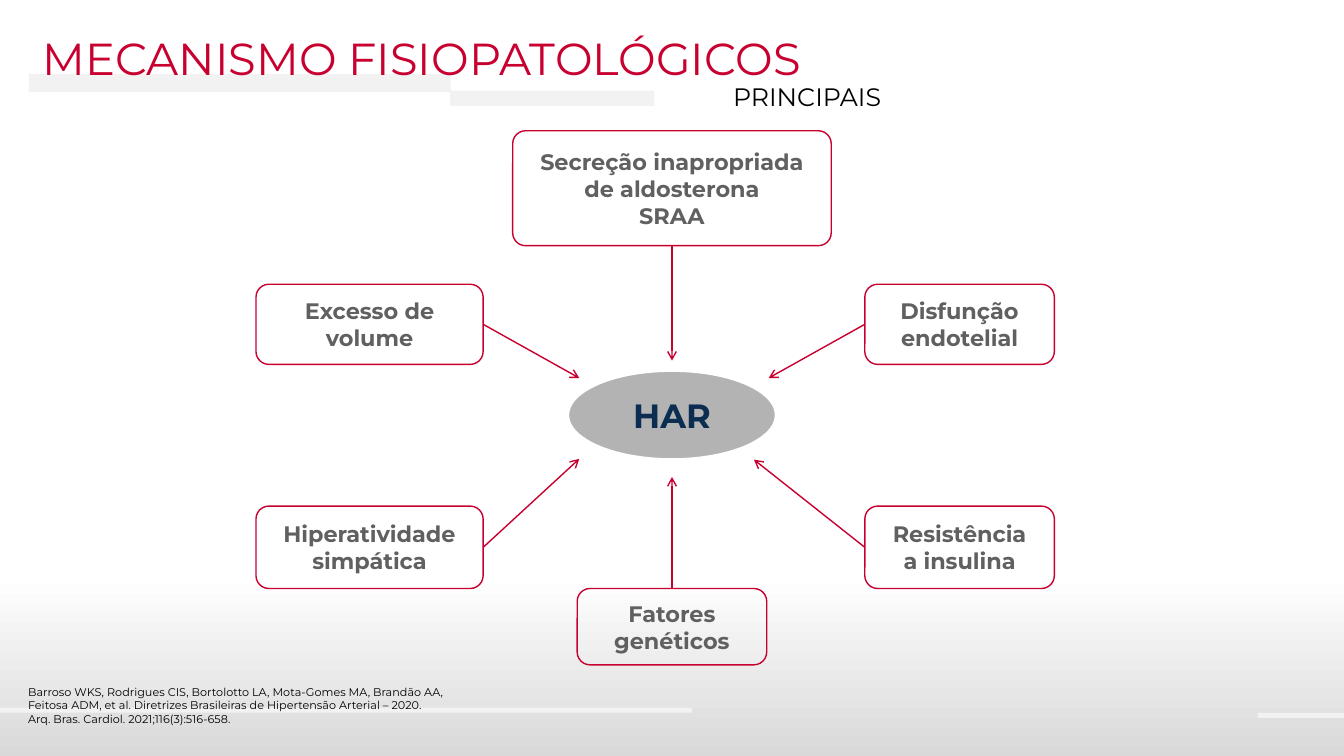
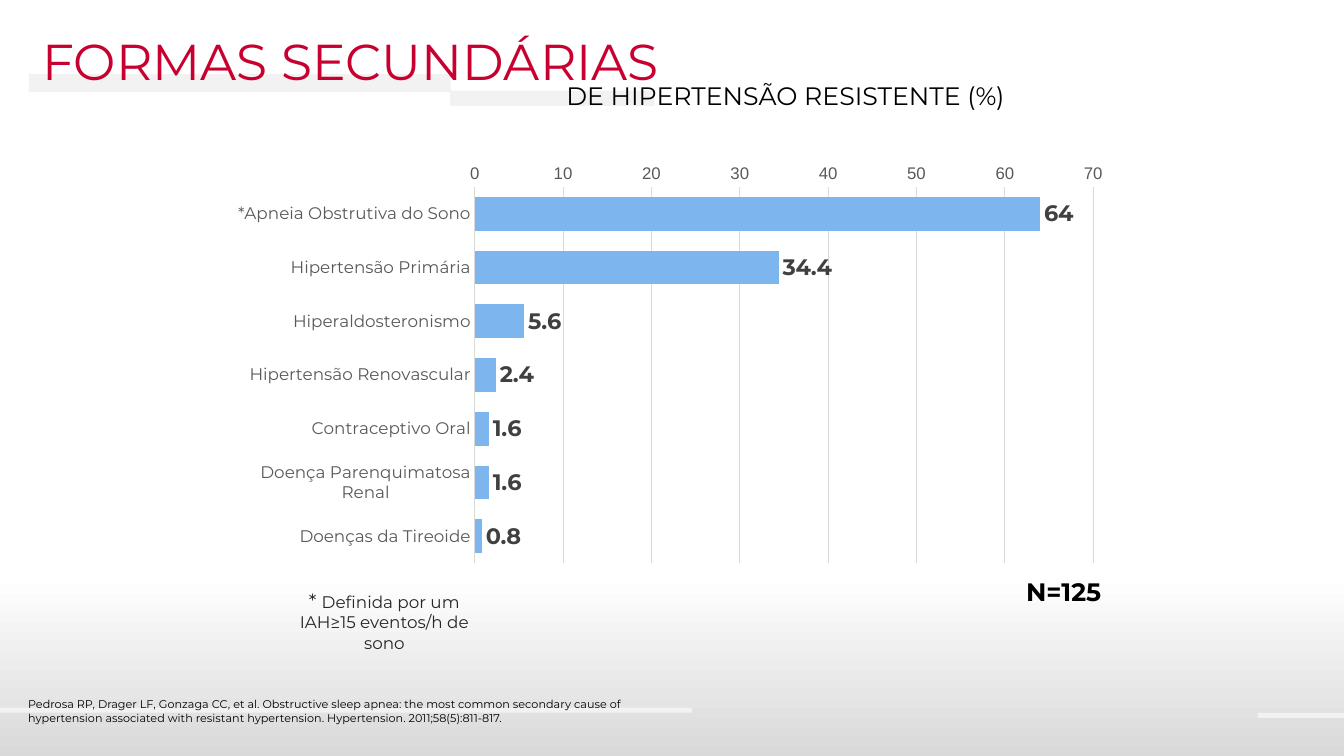
from dataclasses import dataclass

import pptx
import pptx.chart.data
import pptx.dml.color
import pptx.enum.chart
import pptx.enum.shapes
import pptx.enum.text
import pptx.oxml
import pptx.oxml.ns
import pptx.util

Pt = pptx.util.Pt
Align = pptx.enum.text.PP_ALIGN
Shape = pptx.enum.shapes.MSO_SHAPE
WIDE, HIGH = pptx.util.Inches(13.33), pptx.util.Inches(7.5)


def tint(code):
    return pptx.dml.color.RGBColor.from_string(code)


@dataclass(frozen=True)
class Theme:
    font: str = "Montserrat"
    plain: str = "Arial"
    red = tint("C80030")
    navy = tint("0A2D51")
    blue = tint("7DB6EF")
    black = tint("000000")
    ink = tint("262626")
    dark = tint("404040")
    mid = tint("595959")
    gray = tint("606060")
    oval = tint("B3B3B3")
    rule = tint("D9D9D9")
    band = tint("F2F2F2")
    white = tint("FFFFFF")
    cite: int = 8
    base: int = 10
    small: int = 12
    star: int = 14
    body: int = 16
    sub: int = 18
    hub: int = 24
    head: int = 36


LOOK = Theme()
TOP, LEFT, BOTTOM, RIGHT = range(4)
# Bands, as shares of the slide in percent: left, top, width, height
BANDS = [(2.14, 9.8, 31.4, 2.4), (33.5, 12, 15.2, 2),
         (0, 93.6, 51.5, 0.67), (93.6, 94.3, 6.4, 0.67)]
# Text, centre, size, side the arrow leaves from, arrow tip
CAUSES = [
    ("Secreção inapropriada\nde aldosterona\nSRAA",
     (50, 24.9), (23.7, 15.2), BOTTOM, (50, 47.7)),
    ("Excesso de\nvolume", (27.5, 42.9), (16.9, 10.6), RIGHT, (43.1, 50)),
    ("Disfunção\nendotelial", (71.4, 42.9), (14.1, 10.6), LEFT, (57.2, 50)),
    ("Hiperatividade\nsimpática", (27.5, 72.4), (16.9, 10.9), RIGHT, (43.1, 60.7)),
    ("Resistência\na insulina", (71.4, 72.4), (14.1, 10.9), LEFT, (56.1, 60.8)),
    ("Fatores\ngenéticos", (50, 82.9), (14.1, 10.1), TOP, (50, 63.1)),
]
FORMS = {
    "*Apneia Obstrutiva do Sono": 64,
    "Hipertensão Primária": 34.4,
    "Hiperaldosteronismo": 5.6,
    "Hipertensão Renovascular": 2.4,
    "Contraceptivo Oral": 1.6,
    "Doença Parenquimatosa Renal": 1.6,
    "Doenças da Tireoide": 0.8,
}


def share(*parts):
    """Turn percents, alternately of width and height, into lengths."""
    return [round((HIGH if i % 2 else WIDE) * part / 100)
            for i, part in enumerate(parts)]


def style(font, size, color, bold=False, name=LOOK.font):
    font.name, font.size, font.bold = name, Pt(size), bold
    font.color.rgb = color


def write(frame, text, size, color, bold=False, align=Align.LEFT):
    frame.text = text
    for para in frame.paragraphs:
        para.alignment = align
        for run in para.runs:
            style(run.font, size, color, bold)


def label(slide, area, text, *looks):
    box = slide.shapes.add_textbox(*share(*area))
    box.text_frame.word_wrap = True
    write(box.text_frame, text, *looks)
    return box.text_frame


def block(slide, kind, area, fill=None, line=None):
    shape = slide.shapes.add_shape(kind, *share(*area))
    shape.shadow.inherit = False
    if fill is None:
        shape.fill.background()
    else:
        shape.fill.solid()
        shape.fill.fore_color.rgb = fill
    if line is None:
        shape.line.fill.background()
    else:
        shape.line.color.rgb = line
        shape.line.width = Pt(1)
    return shape


def center(shape, text, size, color):
    frame = shape.text_frame
    frame.word_wrap = False
    frame.vertical_anchor = pptx.enum.text.MSO_ANCHOR.MIDDLE
    write(frame, text, size, color, True, Align.CENTER)


def arrow(slide, box, side, tip):
    x, y = share(*tip)
    link = slide.shapes.add_connector(
        pptx.enum.shapes.MSO_CONNECTOR.STRAIGHT, x, y, x, y)
    link.begin_connect(box, side)
    link.line.color.rgb = LOOK.red
    link.line.width = Pt(1)
    ns = pptx.oxml.ns.nsdecls("a")
    line = link.line._get_or_add_ln()
    line.append(pptx.oxml.parse_xml(f'<a:tailEnd {ns} type="arrow"/>'))
    line.addnext(pptx.oxml.parse_xml(f"<a:effectLst {ns}/>"))


def dress(layout, slide):
    """Give the layout its gradient and bands, drawn first on a slide."""
    fill = layout.background.fill
    fill.gradient()
    fill.gradient_angle = 270
    for stop, color, spot in zip(fill.gradient_stops,
                                 (LOOK.white, LOOK.rule), (0.76, 1)):
        stop.color.rgb, stop.position = color, spot
    for area in BANDS:
        band = block(slide, Shape.RECTANGLE, area, LOOK.band)
        layout.shapes.element.append(band.element)


def head(slide, title, size, sub, spot, cite, top):
    name = slide.shapes.title
    name.left, name.top, name.width, name.height = share(2.4, 3.33, 95.2, 9)
    frame = name.text_frame
    frame.auto_size = pptx.enum.text.MSO_AUTO_SIZE.NONE
    frame.vertical_anchor = pptx.enum.text.MSO_ANCHOR.TOP
    write(frame, title, size, LOOK.red)
    label(slide, (*spot, 46, 5.3), sub, LOOK.sub, LOOK.black)
    label(slide, (1.35, top, 50.2, 6), cite, LOOK.cite, LOOK.black)


def causes(slide):
    hub = block(slide, Shape.OVAL, (42.3, 49.1, 15.4, 11.6),
                LOOK.oval, LOOK.white)
    center(hub, "HAR", LOOK.hub, LOOK.navy)
    for text, (x, y), (w, h), side, tip in CAUSES:
        box = block(slide, Shape.ROUNDED_RECTANGLE,
                    (x - w / 2, y - h / 2, w, h), line=LOOK.red)
        box.adjustments[0] = 1.7 / h
        center(box, text, LOOK.body, LOOK.gray)
        arrow(slide, box, side, tip)


def place(chart, x, y, w, h):
    """Fix the inner plot area, as parts of the chart's size."""
    spots = "".join(f'<c:{key} val="{val}"/>' for key, val in
                    (("xMode", "edge"), ("yMode", "edge"),
                     ("x", x), ("y", y), ("w", w), ("h", h)))
    area = chart.element.chart.plotArea
    for old in area.findall(pptx.oxml.ns.qn("c:layout")):
        area.remove(old)
    area.insert(0, pptx.oxml.parse_xml(
        f'<c:layout {pptx.oxml.ns.nsdecls("c")}><c:manualLayout>'
        f'<c:layoutTarget val="inner"/>{spots}</c:manualLayout></c:layout>'))


def bars(slide):
    kinds = pptx.enum.chart
    data = pptx.chart.data.CategoryChartData()
    data.categories = list(FORMS)
    data.add_series("Series 1", list(FORMS.values()))
    chart = slide.shapes.add_chart(
        kinds.XL_CHART_TYPE.BAR_CLUSTERED,
        *share(16.65, 20.9, 66.7, 54.7), data).chart
    chart.has_legend = chart.has_title = False
    style(chart.font, LOOK.base, LOOK.black, name=LOOK.plain)
    place(chart, 0.28, 0.07, 0.69, 0.91)

    cat, val = chart.category_axis, chart.value_axis
    for axis, name in ((cat, LOOK.font), (val, LOOK.plain)):
        axis.major_tick_mark = kinds.XL_TICK_MARK.NONE
        axis.minor_tick_mark = kinds.XL_TICK_MARK.NONE
        style(axis.tick_labels.font, LOOK.small, LOOK.mid, name=name)
    cat.reverse_order = True
    val.minimum_scale, val.maximum_scale, val.major_unit = 0, 70, 10
    val.format.line.fill.background()
    for line in (cat.format.line, val.major_gridlines.format.line):
        line.color.rgb = LOOK.rule
        line.width = Pt(0.75)

    plot = chart.plots[0]
    plot.gap_width = 60
    plot.vary_by_categories = False
    fill = plot.series[0].format.fill
    fill.solid()
    fill.fore_color.rgb = LOOK.blue
    tags = plot.series[0].data_labels
    tags.show_value = True
    tags.position = kinds.XL_LABEL_POSITION.OUTSIDE_END
    style(tags.font, LOOK.body, LOOK.dark, True)


def notes(slide):
    frame = label(slide, (21.1, 77.2, 15, 9.9), "* ",
                  LOOK.star, LOOK.ink, False, Align.CENTER)
    run = frame.paragraphs[0].add_run()
    run.text = "Definida por um IAH≥15 eventos/h de sono"
    style(run.font, LOOK.small, LOOK.ink)
    label(slide, (75.6, 75.6, 9, 5.3), "N=125", LOOK.sub, LOOK.black, True)


def main():
    deck = pptx.Presentation()
    deck.slide_width, deck.slide_height = WIDE, HIGH
    layout = deck.slide_layouts[5]
    first, second = (deck.slides.add_slide(layout) for _ in range(2))
    dress(layout, first)

    head(first, "MECANISMO FISIOPATOLÓGICOS", LOOK.head - 4,
         "PRINCIPAIS", (53.8, 10.1),
         "Barroso WKS, Rodrigues CIS, Bortolotto LA, Mota-Gomes MA, Brandão AA,\n"
         "Feitosa ADM, et al. Diretrizes Brasileiras de Hipertensão Arterial – 2020.\n"
         "Arq. Bras. Cardiol. 2021;116(3):516-658.", 90)
    causes(first)

    head(second, "FORMAS SECUNDÁRIAS", LOOK.head,
         "DE HIPERTENSÃO RESISTENTE (%)", (41.4, 10),
         "Pedrosa RP, Drager LF, Gonzaga CC, et al. Obstructive sleep apnea: "
         "the most common secondary cause of hypertension associated with "
         "resistant hypertension. Hypertension. 2011;58(5):811-817.", 91.6)
    bars(second)
    notes(second)
    deck.save("out.pptx")


if __name__ == "__main__":
    main()
